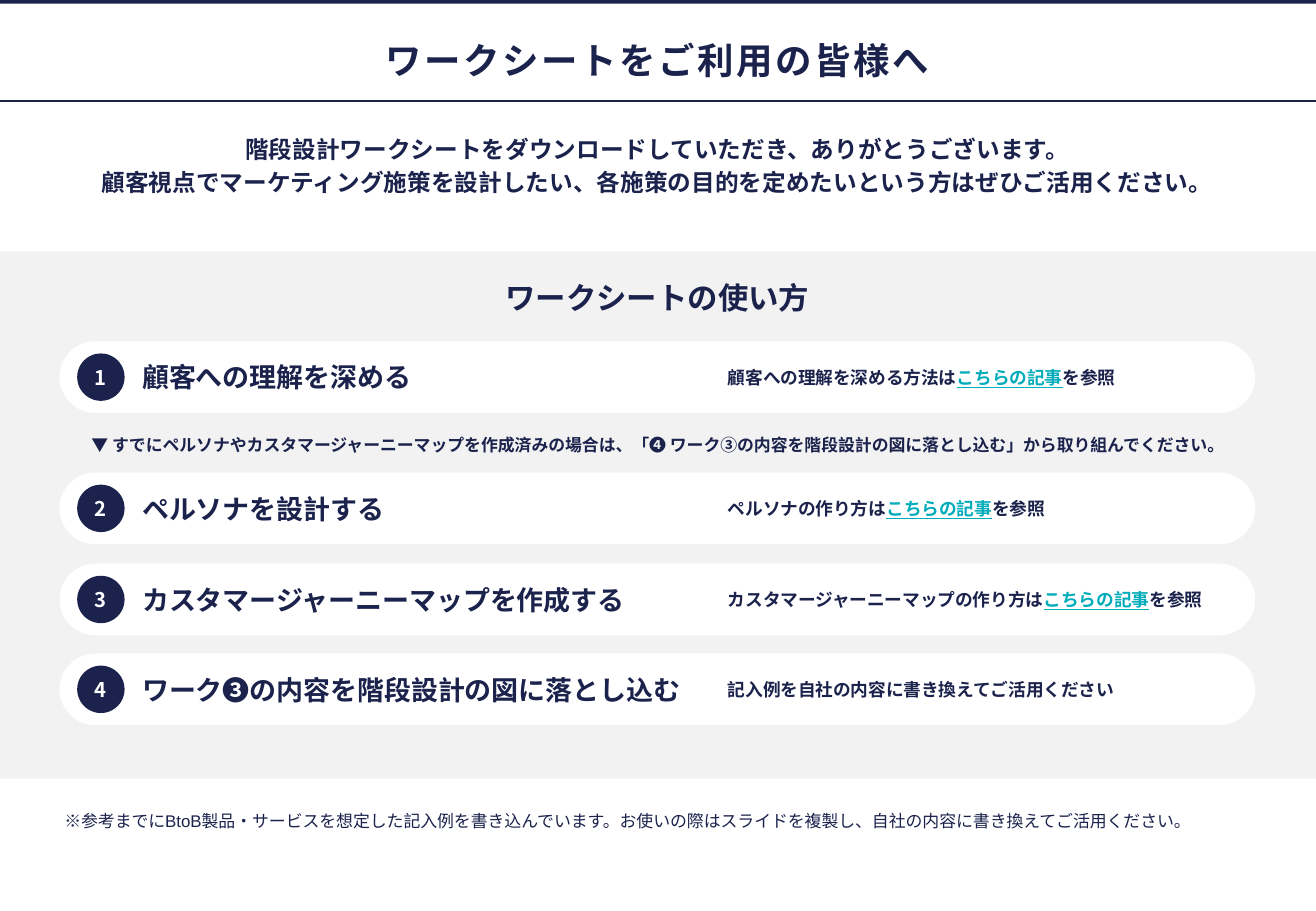
from pptx import Presentation
from pptx.dml.color import RGBColor
from pptx.enum.shapes import MSO_CONNECTOR, MSO_SHAPE
from pptx.enum.text import MSO_ANCHOR, MSO_AUTO_SIZE, PP_ALIGN
from pptx.oxml.ns import qn
from pptx.util import Inches, Pt
from lxml import etree

RECT, PILL, DISC = MSO_SHAPE.RECTANGLE, MSO_SHAPE.ROUNDED_RECTANGLE, MSO_SHAPE.OVAL
LEFT, CENTER = PP_ALIGN.LEFT, PP_ALIGN.CENTER
TOP, MIDDLE = MSO_ANCHOR.TOP, MSO_ANCHOR.MIDDLE
COLORS = {"navy": "1B224C", "teal": "00ACBA", "gray": "F2F2F2", "white": "FFFFFF"}
NOTO, ARIAL = "Noto Sans CJK JP", "Arial"
COLS, ROWS = 108.3, 75
MARGIN, WIDTH = 4.9, 98.4
LINK = "こちらの記事"
# top row, heading, note before the link, note after the link
STEPS = [
    (28.1, "顧客への理解を深める", "顧客への理解を深める方法は", "を参照"),
    (38.9, "ペルソナを設計する", "ペルソナの作り方は", "を参照"),
    (46.4, "カスタマージャーニーマップを作成する", "カスタマージャーニーマップの作り方は", "を参照"),
    (53.8, "ワーク❸の内容を階段設計の図に落とし込む", "記入例を自社の内容に書き換えてご活用ください", ""),
]


def color(name):
    return RGBColor.from_string(COLORS[name])


def write(shape, *paras, size, font=NOTO, ink="navy", bold=True, align=LEFT,
          anchor=MIDDLE, inset=(0.04, 0.04), wrap=True, after=0, lead=None, track=0):
    """Fill a shape with paragraphs; each is a string or a list of (text, is_link)."""
    frame = shape.text_frame
    frame.auto_size = MSO_AUTO_SIZE.NONE
    frame.word_wrap = wrap
    frame.vertical_anchor = anchor
    frame.margin_left = frame.margin_right = Inches(inset[0])
    frame.margin_top = frame.margin_bottom = Inches(inset[1])
    for i, parts in enumerate(paras):
        para = frame.add_paragraph() if i else frame.paragraphs[0]
        para.alignment = align
        para.space_before, para.space_after = Pt(0), Pt(after)
        if lead:
            para.line_spacing = lead
        for text, link in [(parts, False)] if isinstance(parts, str) else parts:
            run = para.add_run()
            run.text = text
            run.font.size, run.font.bold, run.font.name = Pt(size), bold, font
            run.font.color.rgb = color("teal" if link else ink)
            if link:
                run.font.underline = True
            props = run.font._element
            etree.SubElement(props, qn("a:ea"), typeface=NOTO)
            if track:
                props.set("spc", str(round(track * 100)))


class Sheet:
    """Slide builder whose lengths are columns and rows of the grid."""

    def __init__(self, deck):
        self.slide = deck.slides.add_slide(deck.slide_layouts[5])
        self.col = deck.slide_width / COLS
        self.row = deck.slide_height / ROWS

    def box(self, x, y, w, h):
        return [round(v) for v in (x * self.col, y * self.row, w * self.col, h * self.row)]

    def title(self, text, *area, **style):
        shape = self.slide.shapes.title
        shape.left, shape.top, shape.width, shape.height = self.box(*area)
        write(shape, text, **style)

    def text(self, paras, *area, **style):
        write(self.slide.shapes.add_textbox(*self.box(*area)), *paras, **style)

    def shape(self, kind, fill, *area):
        shape = self.slide.shapes.add_shape(kind, *self.box(*area))
        shape.shadow.inherit = False
        shape.fill.solid()
        shape.fill.fore_color.rgb = color(fill)
        shape.line.fill.background()
        return shape

    def rule(self, y):
        x, y, w, _ = self.box(0, y, COLS, 0)
        line = self.slide.shapes.add_connector(MSO_CONNECTOR.STRAIGHT, x, y, w, y)
        line.line.color.rgb = color("navy")
        line.line.width = Pt(1)
        etree.SubElement(line._element.spPr, qn("a:effectLst"))

    def step(self, num, top, head, note, tail):
        pill = self.shape(PILL, "white", MARGIN, top, WIDTH, 5.9)
        pill.adjustments[0] = 0.5
        disc = self.shape(DISC, "navy", 6.35, top + 1, 3.9, 3.9)
        write(disc, str(num), size=12, ink="white", align=CENTER, inset=(0, 0))
        self.text([head], 11.3, top + 1, 47.2, 3.9, size=16, font=ARIAL)
        parts = [(note, False), (LINK, True), (tail, False)] if tail else note
        self.text([parts], 59.5, top + 1, 41.3, 3.9, size=10.5, font=ARIAL)


def main():
    deck = Presentation()
    deck.slide_width, deck.slide_height = Inches(10.83), Inches(7.5)
    sheet = Sheet(deck)
    plain = dict(align=CENTER, anchor=TOP, inset=(0.1, 0.05))

    sheet.rule(8.3)
    sheet.shape(RECT, "navy", 0, -0.3, COLS, 0.6)
    sheet.shape(RECT, "gray", 0, 20.7, COLS, 43.4)
    sheet.title("ワークシートをご利用の皆様へ", MARGIN, 2.1, WIDTH, 3.9, size=21.6,
                font=ARIAL, align=CENTER, wrap=False, lead=1.5, track=1.5)
    sheet.text(["階段設計ワークシートをダウンロードしていただき、ありがとうございます。",
                "顧客視点でマーケティング施策を設計したい、各施策の目的を定めたいという方はぜひご活用ください。"],
               MARGIN, 10.9, WIDTH, 6.8, size=14, after=4, lead=0.9, **plain)
    sheet.text(["ワークシートの使い方"], MARGIN, 22.5, WIDTH, 4, size=18, **plain)
    for num, step in enumerate(STEPS, 1):
        sheet.step(num, *step)
    sheet.text(["▼ すでにペルソナやカスタマージャーニーマップを作成済みの場合は、"
                "「❹ ワーク③の内容を階段設計の図に落とし込む」から取り組んでください。"],
               MARGIN, 35.3, WIDTH, 2.7, size=10, **plain)
    sheet.text(["※参考までにBtoB製品・サービスを想定した記入例を書き込んでいます。"
                "お使いの際はスライドを複製し、自社の内容に書き換えてご活用ください。"],
               MARGIN, 65.6, WIDTH, 3.9, size=10, font=ARIAL, bold=False)
    deck.save("out.pptx")


if __name__ == "__main__":
    main()
